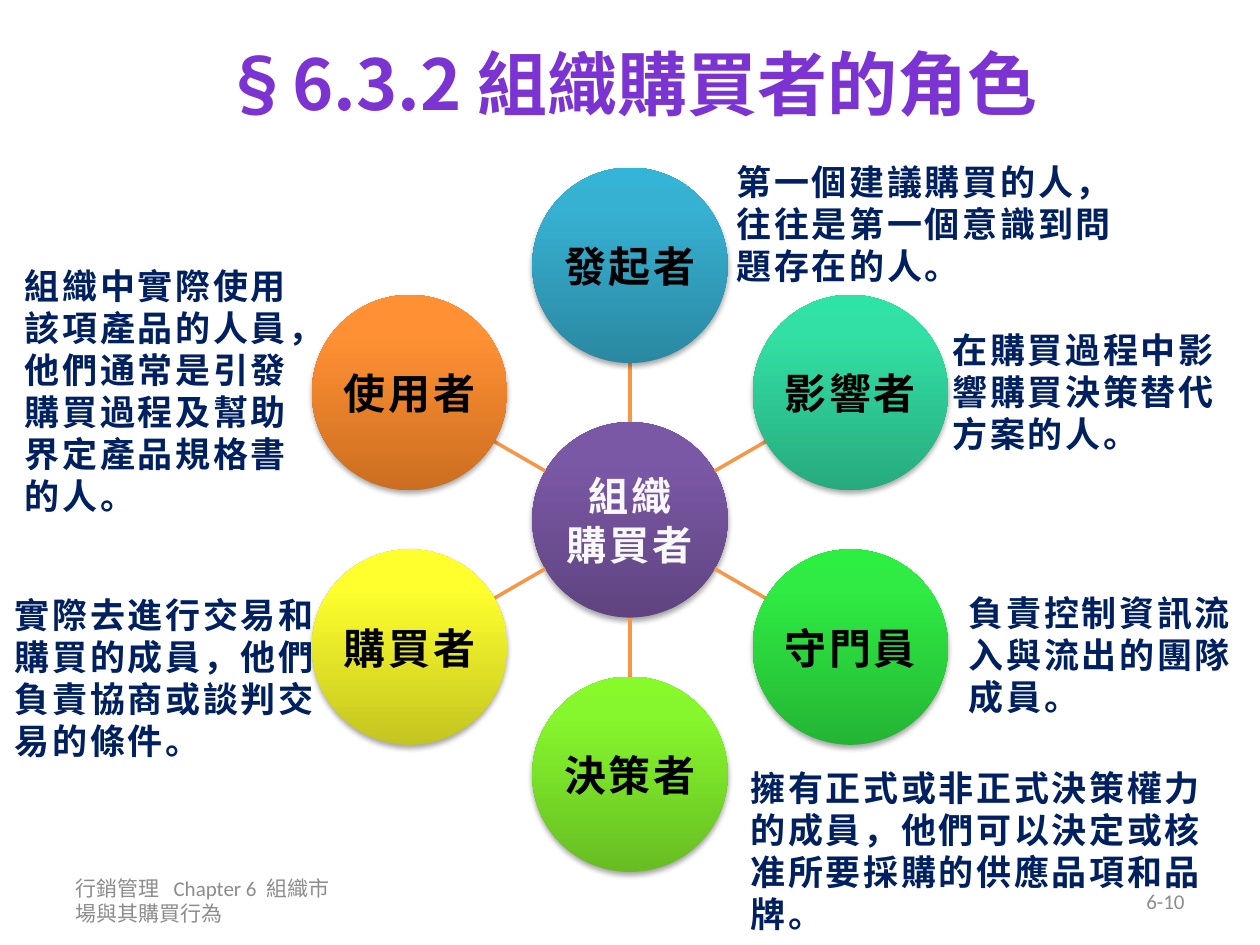
from math import cos, radians, sin

from lxml.etree import SubElement
from pptx import Presentation
from pptx.dml.color import RGBColor
from pptx.enum.shapes import MSO_CONNECTOR as Connector, MSO_SHAPE as Shape
from pptx.enum.text import MSO_ANCHOR as Anchor, PP_ALIGN as Align
from pptx.oxml import parse_xml
from pptx.oxml.ns import nsdecls, qn
from pptx.util import Cm, Pt

CJK = "Noto Sans CJK SC"
CENTER_X, CENTER_Y = 12.7, 10.48
RING, RADIUS = 5.13, 1.97


def write(box, lines, color, size, font=CJK, align=Align.LEFT, anchor=Anchor.TOP,
          bold=True, spacing=0, leading=None, inset=None):
    """Fill a shape with one paragraph per line; spacing is in hundredths of a point."""
    frame = box.text_frame
    frame.word_wrap = True
    frame.vertical_anchor = anchor
    if inset is not None:
        for side in ("left", "top", "right", "bottom"):
            setattr(frame, f"margin_{side}", Cm(inset))
    for index, line in enumerate(lines):
        para = frame.add_paragraph() if index else frame.paragraphs[0]
        para.alignment = align
        if leading:
            para.line_spacing = Pt(leading)
        span = para.add_run()
        span.text = line
        for name, value in {"size": Pt(size), "bold": bold, "name": font}.items():
            setattr(span.font, name, value)
        span.font.color.rgb = RGBColor.from_string(color)
        properties = span.font._element
        SubElement(properties, qn("a:ea")).set("typeface", font)
        if spacing:
            properties.set("spc", str(spacing))


def add_circle(x, y, stops, lines, color, size):
    """Draw a shaded circle with a soft shadow; stops run from bottom to top."""
    circle = slide.shapes.add_shape(Shape.OVAL, Cm(x - RADIUS), Cm(y - RADIUS),
                                    Cm(2 * RADIUS), Cm(2 * RADIUS))
    circle.line.fill.background()
    circle.shadow.inherit = False
    properties = circle._element.spPr
    marks = "".join(f'<a:gs pos="{place}"><a:srgbClr val="{shade}"/></a:gs>'
                    for place, shade in zip((0, 80000, 100000), stops))
    properties.find(qn("a:prstGeom")).addnext(parse_xml(
        f'<a:gradFill {nsdecls("a")} rotWithShape="1"><a:gsLst>{marks}</a:gsLst>'
        '<a:lin ang="16200000" scaled="0"/></a:gradFill>'))
    properties.find(qn("a:effectLst")).append(parse_xml(
        f'<a:outerShdw {nsdecls("a")} blurRad="40000" dist="23000" dir="5400000" '
        'rotWithShape="0"><a:srgbClr val="000000"><a:alpha val="35000"/>'
        '</a:srgbClr></a:outerShdw>'))
    write(circle, lines, color, size, align=Align.CENTER, anchor=Anchor.MIDDLE,
          spacing=150, leading=size * 1.22, inset=0.05)


deck = Presentation()
deck.slide_width, deck.slide_height = Cm(25.4), Cm(19.05)
slide = deck.slides.add_slide(deck.slide_layouts[6])

# Title and footer
title = slide.shapes.add_textbox(Cm(1.27), Cm(0), Cm(22.86), Cm(3.33))
write(title, ["§6.3.2 組織購買者的角色"], "7B34D2", 40,
      align=Align.CENTER, anchor=Anchor.MIDDLE)
footers = [
    (1.27, "行銷管理   Chapter 6  組織市場與其購買行為", Align.LEFT),
    (18.21, "6-10", Align.RIGHT),
]
for left, text, align in footers:
    footer = slide.shapes.add_textbox(Cm(left), Cm(17.65), Cm(5.92), Cm(1.02))
    write(footer, [text], "8C8C8C", 12, font="Calibri", align=align,
          anchor=Anchor.MIDDLE, bold=False)

# Hub with six roles, clockwise from the top
add_circle(CENTER_X, CENTER_Y, ("5F4480", "7B58A6", "7C57A8"),
           ["組織", "購買者"], "F8F8F8", 23)
roles = [
    ("發起者", ("2A88A2", "37B1D2", "34B4D6")),
    ("影響者", ("27AB7E", "32DFA4", "2FE3A6")),
    ("守門員", ("24B534", "2FEB43", "2CEF41")),
    ("決策者", ("67BD22", "86F62D", "86FB29")),
    ("購買者", ("C4C521", "FEFF2C", "FEFF2D")),
    ("使用者", ("CC6E20", "FF9034", "FF9136")),
]
for index, (role, stops) in enumerate(roles):
    angle = radians(index * 360 / len(roles) - 90)
    across, down = cos(angle), sin(angle)
    inner, outer = RADIUS, RING - RADIUS
    spoke = slide.shapes.add_connector(
        Connector.STRAIGHT,
        Cm(CENTER_X + inner * across), Cm(CENTER_Y + inner * down),
        Cm(CENTER_X + outer * across), Cm(CENTER_Y + outer * down))
    spoke.line.color.rgb = RGBColor.from_string("F79646")
    spoke.line.width = Pt(2)
    SubElement(spoke._element.spPr, qn("a:effectLst"))
    add_circle(CENTER_X + RING * across, CENTER_Y + RING * down,
               stops, [role], "000000", 24)

# Role descriptions: left, top, width, height, text
descriptions = [
    (14.6, 3.12, 8.81, 2.82, "第一個建議購買的人，往往是第一個意識到問題存在的人。"),
    (18.95, 6.5, 6.35, 2.82, "在購買過程中影響購買決策替代方案的人。"),
    (19.28, 11.79, 6.02, 2.82, "負責控制資訊流入與流出的團隊成員。"),
    (14.88, 15.32, 10.31, 3.68, "擁有正式或非正式決策權力的成員，他們可以決定或核准所要採購的供應品項和品牌。"),
    (0.05, 11.84, 6.68, 3.68, "實際去進行交易和購買的成員，他們負責協商或談判交易的條件。"),
    (0.25, 5.21, 6.25, 5.38, "組織中實際使用該項產品的人員，他們通常是引發購買過程及幫助界定產品規格書的人。"),
]
for left, top, width, height, text in descriptions:
    box = slide.shapes.add_textbox(Cm(left), Cm(top), Cm(width), Cm(height))
    write(box, [text], "002060", 20, spacing=150, leading=24)

deck.save("out.pptx")
